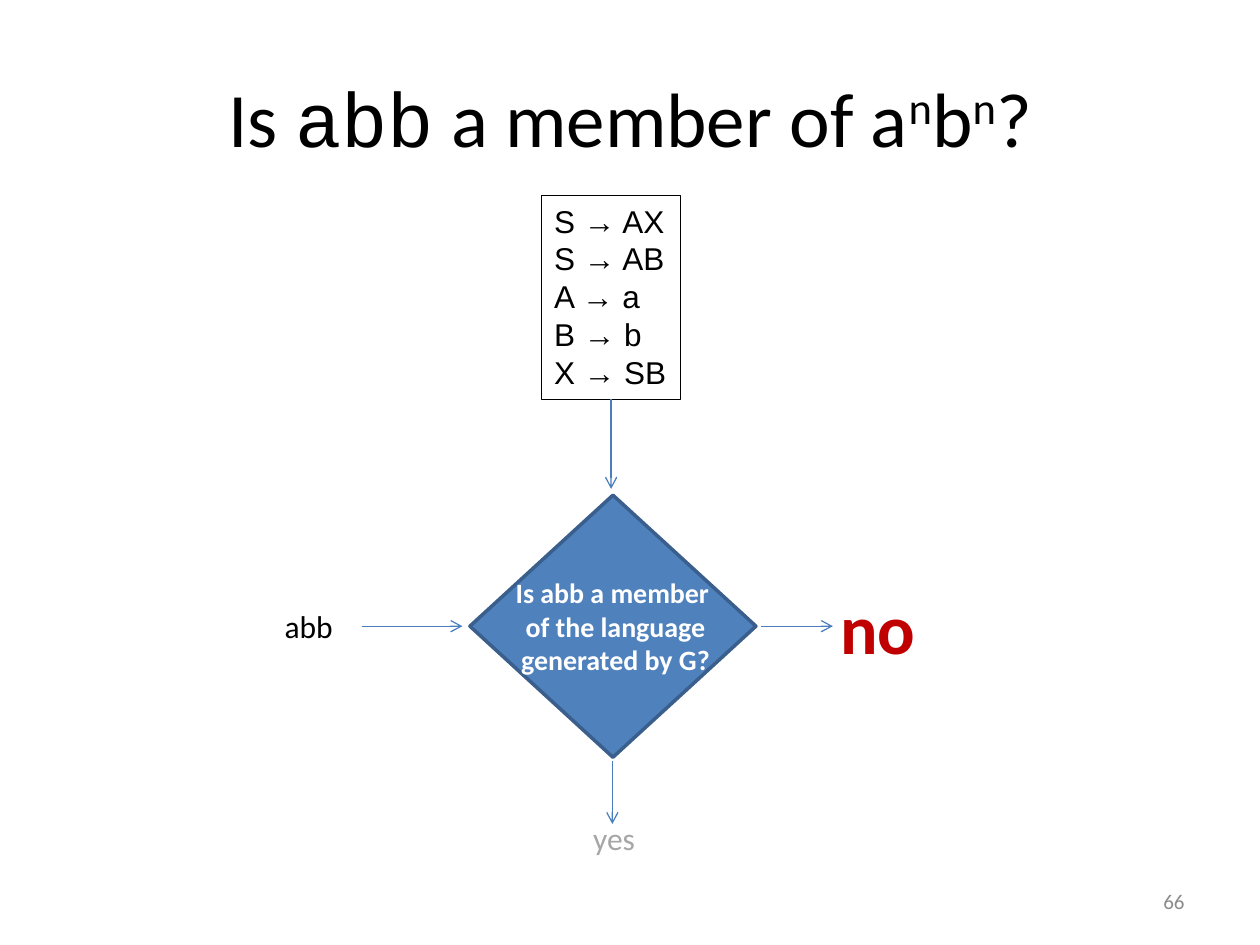
from lxml.etree import SubElement
from pptx import Presentation
from pptx.dml.color import RGBColor
from pptx.enum.shapes import MSO_CONNECTOR, MSO_SHAPE
from pptx.enum.text import MSO_ANCHOR, PP_ALIGN
from pptx.oxml.ns import qn
from pptx.util import Inches, Pt

COLORS = {
    "black": "000000",
    "white": "FFFFFF",
    "gray": "8C8C8C",
    "faded": "A6A6A6",
    "red": "C00000",
    "blue": "4F81BD",
    "outline": "3A5F8C",
    "arrow": "4B7EBC",
}
RULES = ["S → AX", "S → AB", "A → a", "B → b", "X → SB"]
TITLE = [
    ("Is ", {}),
    ("abb", {"name": "Courier New"}),
    (" a member of a", {}),
    ("n", {"raised": True}),
    ("b", {}),
    ("n", {"raised": True}),
    ("?", {}),
]


def color(name):
    return RGBColor.from_string(COLORS[name])


def add_span(para, text, size, ink="black", raised=False, **font_values):
    span = para.add_run()
    span.text = text
    for key, value in {"name": "Calibri", "size": Pt(size), **font_values}.items():
        setattr(span.font, key, value)
    span.font.color.rgb = color(ink)
    if raised:
        span.font._element.set("baseline", "30000")


def add_text(page, place, lines, size, align=PP_ALIGN.LEFT, anchor=MSO_ANCHOR.TOP,
             wrap=False, **font_values):
    """Add a text box; a vertical tab in a line makes a line break."""
    box = page.shapes.add_textbox(*map(Inches, place))
    frame = box.text_frame
    frame.word_wrap = wrap
    frame.vertical_anchor = anchor
    for index, line in enumerate(lines):
        para = frame.paragraphs[0] if index == 0 else frame.add_paragraph()
        para.alignment = align
        spans = [(line, {})] if isinstance(line, str) else line
        for text, values in spans:
            for part_index, part in enumerate(text.split("\v")):
                if part_index:
                    para.add_line_break()
                add_span(para, part, size, **{**font_values, **values})
    return box


def set_line(shape, ink, width):
    shape.line.color.rgb = color(ink)
    shape.line.width = Pt(width)


def add_decision(page, place):
    diamond = page.shapes.add_shape(MSO_SHAPE.FLOWCHART_DECISION, *map(Inches, place))
    diamond.shadow.inherit = False
    diamond.fill.solid()
    diamond.fill.fore_color.rgb = color("blue")
    set_line(diamond, "outline", 2)


def add_arrow(page, start, end):
    arrow = page.shapes.add_connector(MSO_CONNECTOR.STRAIGHT, *map(Inches, start + end))
    set_line(arrow, "arrow", 0.75)
    SubElement(arrow.line._get_or_add_ln(), qn("a:tailEnd"), type="arrow")
    SubElement(arrow._element.spPr, qn("a:effectLst"))
    return arrow


def main():
    deck = Presentation()
    deck.slide_width, deck.slide_height = Inches(10), Inches(7.5)
    page = deck.slides.add_slide(deck.slide_layouts[6])

    add_text(page, (0.5, 0.3, 9, 1.25), [TITLE], 44, PP_ALIGN.CENTER,
             MSO_ANCHOR.MIDDLE, wrap=True)
    add_text(page, (7.17, 6.95, 2.33, 0.4), ["66"], 12, PP_ALIGN.RIGHT,
             MSO_ANCHOR.MIDDLE, wrap=True, ink="gray")

    add_decision(page, (3.73, 3.93, 2.27, 2.08))
    add_text(page, (3.96, 4.52, 1.85, 0.91),
             ["Is abb a member \vof the language generated by G?"], 16,
             PP_ALIGN.CENTER, wrap=True, ink="white", bold=True)

    grammar = add_text(page, (4.3, 1.55, 1.1, 1.62), RULES, 18, name="Arial")
    set_line(grammar, "black", 0.75)
    add_text(page, (2.16, 4.77, 0.59, 0.4), ["abb"], 18)
    add_text(page, (4.61, 6.45, 0.54, 0.4), ["yes"], 18, ink="faded")
    add_text(page, (6.57, 4.59, 0.81, 0.77), ["no"], 40, ink="red", bold=True)

    grammar_arrow = add_arrow(page, (4.85, 3.17), (4.85, 3.88))
    grammar_arrow.begin_connect(grammar, 2)
    for start, end in [
        ((2.87, 4.97), (3.67, 4.97)),
        ((6.04, 4.97), (6.61, 4.97)),
        ((4.86, 6.04), (4.86, 6.54)),
    ]:
        add_arrow(page, start, end)

    deck.save("out.pptx")


if __name__ == "__main__":
    main()
